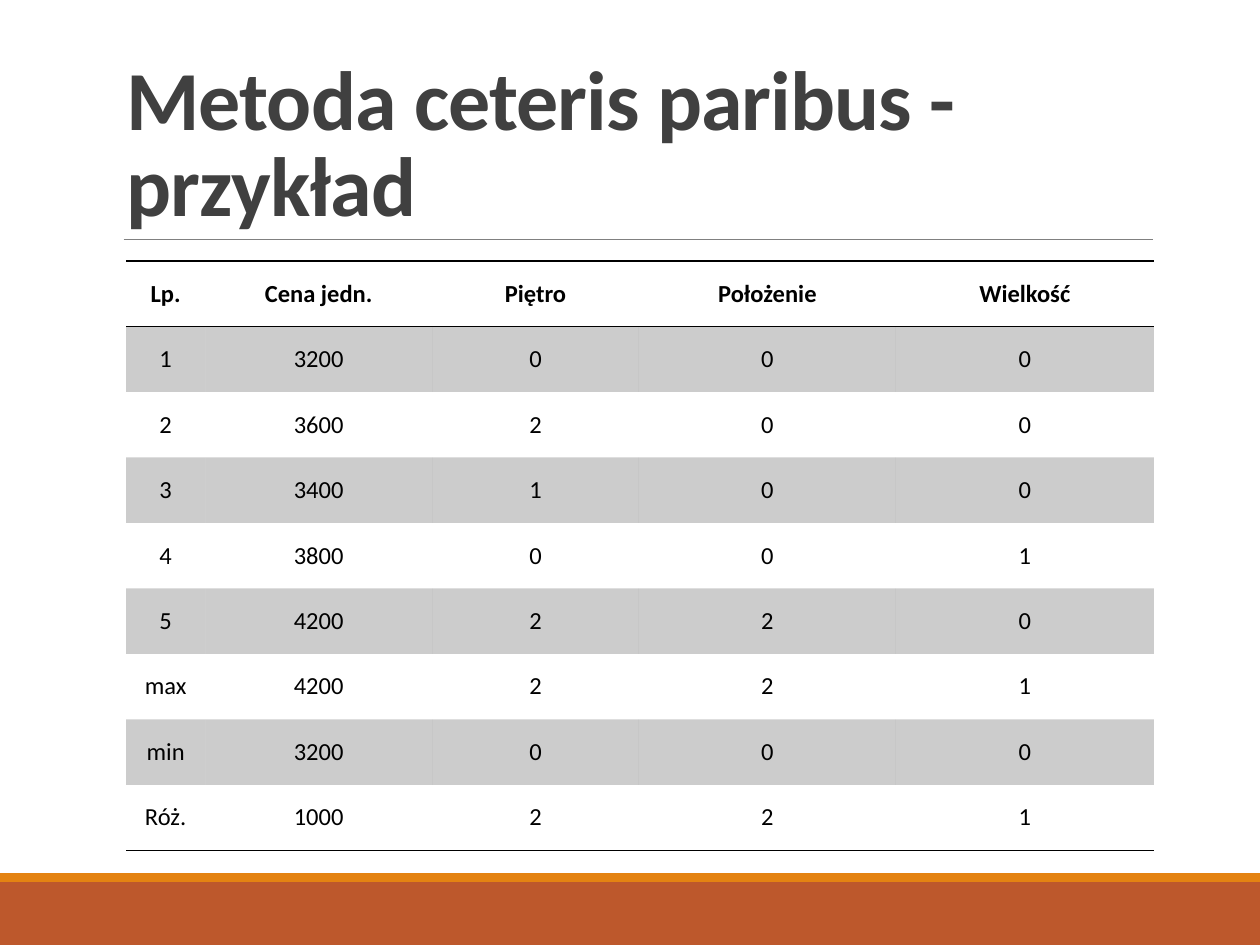
from lxml import etree
from pptx import Presentation
from pptx.dml.color import RGBColor
from pptx.enum.shapes import MSO_CONNECTOR, MSO_SHAPE
from pptx.enum.text import MSO_ANCHOR, MSO_AUTO_SIZE, PP_ALIGN
from pptx.oxml.ns import qn
from pptx.util import Cm, Pt

RECTANGLE = MSO_SHAPE.RECTANGLE
STRAIGHT = MSO_CONNECTOR.STRAIGHT
BOTTOM, MIDDLE = MSO_ANCHOR.BOTTOM, MSO_ANCHOR.MIDDLE
LEFT, CENTER = PP_ALIGN.LEFT, PP_ALIGN.CENTER
NO_AUTOFIT = MSO_AUTO_SIZE.NONE

TITLE_ONLY_LAYOUT = 5
NO_STYLE_NO_GRID = "{2D5ABB26-0587-4C30-8999-92F81FD0307C}"
SLIDE_WIDTH, SLIDE_HEIGHT = 25.4, 19.05
COLORS = {
    "title": "404040",
    "rule": "808080",
    "ink": "000000",
    "band": "BD582C",
    "strip": "E48312",
}
COLUMN_WIDTHS = [1.6, 4.57, 4.17, 5.18, 5.2]
ROW_HEIGHT = 1.32
ROWS = [
    ["Lp.", "Cena jedn.", "Piętro", "Położenie", "Wielkość"],
    ["1", "3200", "0", "0", "0"],
    ["2", "3600", "2", "0", "0"],
    ["3", "3400", "1", "0", "0"],
    ["4", "3800", "0", "0", "1"],
    ["5", "4200", "2", "2", "0"],
    ["max", "4200", "2", "2", "1"],
    ["min", "3200", "0", "0", "0"],
    ["Róż.", "1000", "2", "2", "1"],
]


class SlideBuilder:
    """Holds the style and the slide being filled."""

    font_name = "Calibri"

    def __init__(self, slide):
        self.slide = slide

    def color(self, name):
        return RGBColor.from_string(COLORS[name])

    def format_run(self, run, size, color, bold):
        run.font.name = self.font_name
        run.font.size = Pt(size)
        run.font.bold = bold
        run.font.color.rgb = self.color(color)

    def bar(self, top, height, color):
        shape = self.slide.shapes.add_shape(
            RECTANGLE, 0, Cm(top), Cm(SLIDE_WIDTH), Cm(height))
        shape.shadow.inherit = False
        shape.fill.solid()
        shape.fill.fore_color.rgb = self.color(color)
        shape.line.fill.background()

    def rule(self, left, right, top):
        line = self.slide.shapes.add_connector(
            STRAIGHT, Cm(left), Cm(top), Cm(right), Cm(top))
        line.line.color.rgb = self.color("rule")
        line.line.width = Pt(0.5)
        etree.SubElement(line._element.spPr, qn("a:effectLst"))

    def title(self, text, left, top, width, height):
        shape = self.slide.shapes.title
        shape.left, shape.top = Cm(left), Cm(top)
        shape.width, shape.height = Cm(width), Cm(height)
        frame = shape.text_frame
        frame.text = text
        frame.word_wrap = True
        frame.auto_size = NO_AUTOFIT
        frame.vertical_anchor = BOTTOM
        paragraph = frame.paragraphs[0]
        paragraph.alignment = LEFT
        paragraph.line_spacing = 0.85
        run = paragraph.runs[0]
        self.format_run(run, 48, "title", True)
        run.font._element.set("spc", "-50")

    def border(self, cell, side):
        """Draw one cell edge; side is T or B. Call before filling the cell."""
        properties = cell._tc.get_or_add_tcPr()
        line = etree.SubElement(properties, qn(f"a:ln{side}"), w=str(Pt(1)))
        fill = etree.SubElement(line, qn("a:solidFill"))
        etree.SubElement(fill, qn("a:srgbClr"), val=COLORS["ink"])

    def shade(self, cell, opacity):
        cell.fill.solid()
        cell.fill.fore_color.rgb = self.color("ink")
        color = cell._tc.tcPr.find(".//" + qn("a:solidFill") + "[last()]/" + qn("a:srgbClr"))
        etree.SubElement(color, qn("a:alpha"), val=str(opacity * 1000))

    def cell_text(self, cell, text, bold):
        cell.text = text
        cell.vertical_anchor = MIDDLE
        cell.margin_left = cell.margin_right = Cm(0.18)
        cell.margin_top = cell.margin_bottom = Cm(0.1)
        paragraph = cell.text_frame.paragraphs[0]
        paragraph.alignment = CENTER
        self.format_run(paragraph.runs[0], 14, "ink", bold)

    def table(self, rows, left, top):
        table = self.slide.shapes.add_table(
            len(rows), len(COLUMN_WIDTHS), Cm(left), Cm(top),
            Cm(sum(COLUMN_WIDTHS)), Cm(ROW_HEIGHT * len(rows))).table
        table._tbl.tblPr.find(qn("a:tableStyleId")).text = NO_STYLE_NO_GRID
        for column, width in zip(table.columns, COLUMN_WIDTHS):
            column.width = Cm(width)
        for row_index, values in enumerate(rows):
            table.rows[row_index].height = Cm(ROW_HEIGHT)
            is_header = row_index == 0
            for column_index, value in enumerate(values):
                cell = table.cell(row_index, column_index)
                self.cell_text(cell, value, is_header)
                if is_header:
                    self.border(cell, "T")
                if is_header or row_index == len(rows) - 1:
                    self.border(cell, "B")
                if row_index % 2:
                    self.shade(cell, 20)
                else:
                    cell.fill.background()


def main():
    presentation = Presentation()
    presentation.slide_width = Cm(SLIDE_WIDTH)
    presentation.slide_height = Cm(SLIDE_HEIGHT)
    layout = presentation.slide_layouts[TITLE_ONLY_LAYOUT]
    builder = SlideBuilder(presentation.slides.add_slide(layout))
    builder.bar(17.78, 1.27, "band")
    builder.bar(17.6, 0.18, "strip")
    builder.rule(2.49, 23.24, 4.83)
    builder.title("Metoda ceteris paribus - przykład", 2.29, 0.79, 20.95, 4.04)
    builder.table(ROWS, 2.54, 5.26)
    presentation.save("out.pptx")


if __name__ == "__main__":
    main()
